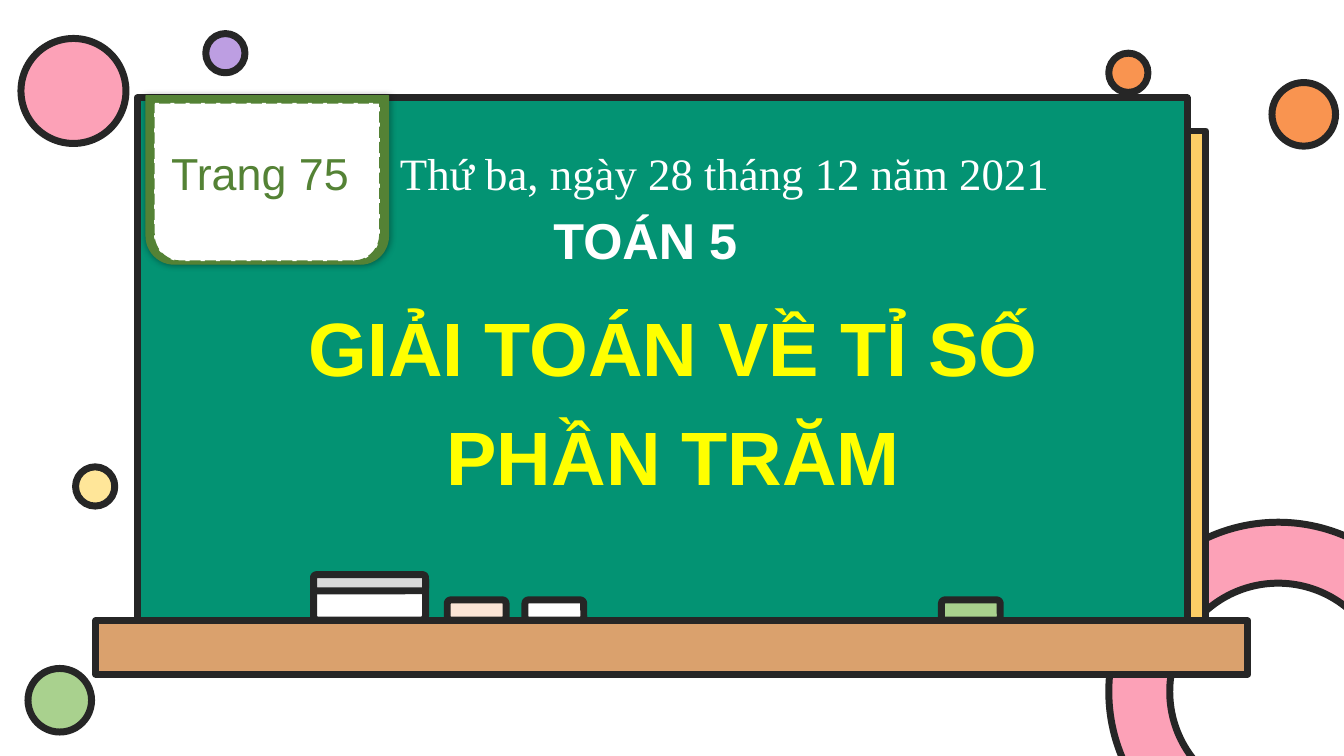
from lxml import etree
from pptx import Presentation
from pptx.dml import color
from pptx.enum import dml, shapes, text
from pptx.oxml import ns
from pptx.util import Pt

INK, GREEN, WHITE = "262626", "548235", "FFFFFF"
KIND = shapes.MSO_SHAPE
ALIGN = text.PP_ALIGN

RING = (792, 373, 242, 242)
BOARD = [
    ((121, 93.6, 740, 376), "FDCE66"),
    ((98, 70, 750, 392), "039373"),
    ((68.4, 443.5, 823, 38), "DAA16D"),
]
DOTS = [
    (15, 27.5, 75, "FCA1B7"),
    (908.6, 59, 45.4, "F99450"),
    (20, 477.5, 45.4, "A9D18E"),
    (54, 333.5, 28, "FFE699"),
    (147, 24, 28, "BD9EE2"),
    (792, 38, 28, "F99450"),
]
ERASER = [((224, 410.5, 80, 32.5), WHITE, 0.1), ((224, 410.5, 80, 11.5), "D9D9D9", 0.17)]
CHALK_TOP, CHALK_W, CHALK_H = 428.5, 42, 14.5
CHALKS = [(319.5, "FBE5D6"), (375, WHITE), (672.5, "A9D18E")]
BADGE = (104.4, 68.4, 173, 120.2)
BADGE_PAPER = (110, 73.5, 161.3, 113)
TEXTS = [
    ("GIẢI TOÁN VỀ TỈ SỐ PHẦN TRĂM", (134, 198.7, 694, 157),
     dict(size=54, hue="FFFF00", bold=True, spacing=1.2)),
    ("Trang 75", (108, 100.8, 155.5, 46), dict(size=32, hue=GREEN)),
    ("TOÁN 5", (190, 146, 542, 51), dict(size=36, bold=True)),
    ("Thứ ba, ngày 28 tháng 12 năm 2021", (278.6, 100.8, 507.6, 46),
     dict(size=32, font="Times New Roman", align=ALIGN.LEFT)),
]


def rgb(value):
    return color.RGBColor.from_string(value)


def add_shape(kind, box, fill, line=INK, weight=5, adjust=None):
    sp = s.shapes.add_shape(kind, *map(Pt, box))
    sp.shadow.inherit = False
    sp.fill.solid()
    sp.fill.fore_color.rgb = rgb(fill)
    sp.line.color.rgb = rgb(line)
    sp.line.width = Pt(weight)
    if adjust is not None:
        sp.adjustments[0] = adjust
    return sp


def add_text(words, box, size, hue=WHITE, bold=False, font="Arial",
             align=ALIGN.CENTER, spacing=1.0):
    tf = s.shapes.add_textbox(*map(Pt, box)).text_frame
    tf.word_wrap = True
    p = tf.paragraphs[0]
    p.alignment = align
    p.line_spacing = spacing
    r = p.add_run()
    r.text = words
    r.font.name = font
    r.font.size = Pt(size)
    r.font.bold = bold
    r.font.color.rgb = rgb(hue)


def add_glow_shadow(sp, blur, alpha):
    effects = sp.element.spPr.find(ns.qn("a:effectLst"))
    shadow = etree.SubElement(effects, ns.qn("a:outerShdw"), blurRad=str(Pt(blur)),
                              dist="0", algn="ctr", rotWithShape="0")
    tint = etree.SubElement(shadow, ns.qn("a:srgbClr"), val="000000")
    etree.SubElement(tint, ns.qn("a:alpha"), val=str(alpha * 1000))


prs = Presentation()
prs.slide_width, prs.slide_height = Pt(960), Pt(540)
s = prs.slides.add_slide(prs.slide_layouts[6])

add_shape(KIND.DONUT, RING, "FCA1B7", adjust=0.18)
for box, fill in BOARD:
    add_shape(KIND.RECTANGLE, box, fill)
for x, y, d, fill in DOTS:
    add_shape(KIND.OVAL, (x, y, d, d), fill)
for box, fill, adjust in ERASER:
    add_shape(KIND.ROUNDED_RECTANGLE, box, fill, adjust=adjust)
for x, fill in CHALKS:
    add_shape(KIND.ROUNDED_RECTANGLE, (x, CHALK_TOP, CHALK_W, CHALK_H), fill, adjust=0.17)

badge = add_shape(KIND.ROUND_2_SAME_RECTANGLE, BADGE, GREEN, GREEN, 1)
add_glow_shadow(badge, 5, 40)
paper = add_shape(KIND.ROUND_2_SAME_RECTANGLE, BADGE_PAPER, WHITE, GREEN, 1)
paper.line.dash_style = dml.MSO_LINE.LONG_DASH
badge.rotation = paper.rotation = 180

for words, box, style in TEXTS:
    add_text(words, box, **style)

prs.save("out.pptx")
